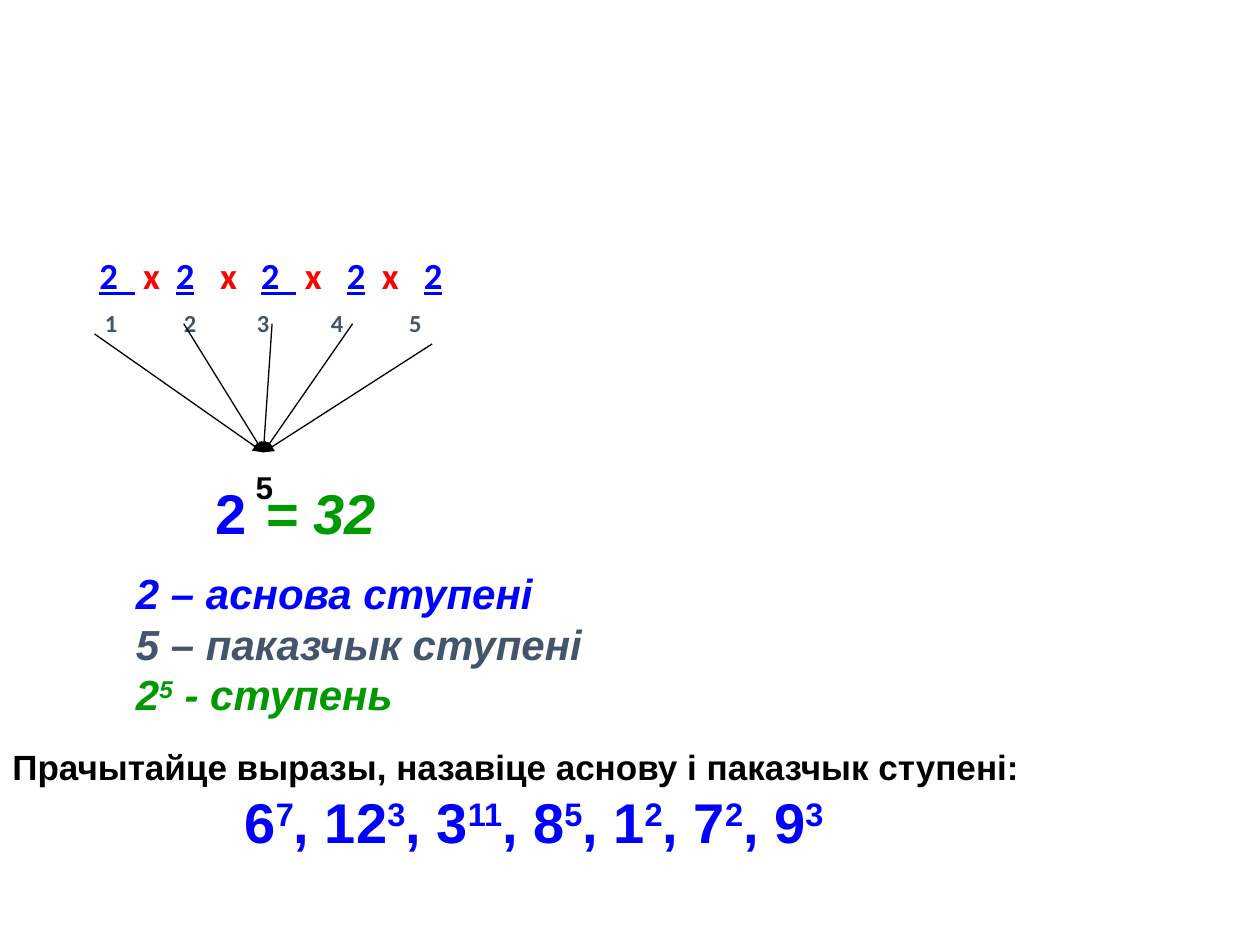
"""Build a slide that explains the base and exponent of a power."""
from lxml.etree import SubElement
from pptx import Presentation
from pptx.dml.color import RGBColor
from pptx.enum.shapes import MSO_CONNECTOR as Connector
from pptx.enum.text import MSO_AUTO_SIZE as AutoSize
from pptx.oxml.ns import qn
from pptx.util import Pt

BLUE = RGBColor(0x00, 0x00, 0xFF)
RED = RGBColor(0xFF, 0x00, 0x00)
GREEN = RGBColor(0x00, 0x99, 0x00)
SLATE = RGBColor(0x44, 0x54, 0x6A)
BLACK = RGBColor(0x00, 0x00, 0x00)

FACTORS = ["2  ", "2", "2  ", "2", "2"]
TIMES = "х"
PRODUCT_STOPS = [25, 43.7, 69, 92.3, 117.4, 141.4, 161.4, 185.4]
COUNT_STOPS = [3.2, 48.3, 90, 132.3, 177]
ARROW_STARTS = [(54, 190.8), (105, 185), (155.5, 185), (201.5, 185), (247, 196.5)]
ARROW_TIP = (150.5, 258.5)
POWERS = [("6", "7"), ("12", "3"), ("3", "11"), ("8", "5"),
          ("1", "2"), ("7", "2"), ("9", "3")]
POWERS_INDENT = 132.8

PRODUCT_FORMAT = {"name": "Calibri", "size": Pt(21), "bold": True}
COUNT_FORMAT = {"name": "Calibri", "size": Pt(14), "bold": True}
EXPONENT_FORMAT = {"name": "Arial", "size": Pt(18), "bold": True}
BASE_FORMAT = {"name": "Arial", "size": Pt(32), "bold": True}
RESULT_FORMAT = {**BASE_FORMAT, "italic": True}
TERM_FORMAT = {"name": "Arial", "size": Pt(24), "bold": True, "italic": True}
TASK_FORMAT = {"name": "Arial", "size": Pt(20), "bold": True}

EQUATION = [
    ((139, 264.2, 23, 28.8), "5", BLACK, EXPONENT_FORMAT),
    ((116, 270, 43, 45.4), "2", BLUE, BASE_FORMAT),
    ((144.7, 270, 108, 45.4), "= 32", GREEN, RESULT_FORMAT),
]
TERMS = [
    [("2 – аснова ступені", BLUE, False)],
    [("5 – паказчык ступені", SLATE, False)],
    [("2", GREEN, False), ("5", GREEN, True), (" - ступень", GREEN, False)],
]
TASK = "Прачытайце выразы, назавіце аснову і паказчык ступені:"


def add_box(slide, place, auto_size=AutoSize.SHAPE_TO_FIT_TEXT):
    frame = slide.shapes.add_textbox(*map(Pt, place)).text_frame
    frame.word_wrap = True
    frame.auto_size = auto_size
    return frame


def add_run(paragraph, text, color, formats, raised=False):
    run = paragraph.add_run()
    run.text = text
    for attribute, value in formats.items():
        setattr(run.font, attribute, value)
    run.font.color.rgb = color
    if raised:
        run._r.get_or_add_rPr().set("baseline", "30000")


def set_stops(paragraph, stops):
    paragraph.line_spacing = 0.9
    paragraph.space_before = Pt(7.5)
    stop_list = SubElement(paragraph._p.get_or_add_pPr(), qn("a:tabLst"))
    for stop in stops:
        SubElement(stop_list, qn("a:tab"), pos=str(Pt(stop)), algn="l")


def add_product(slide):
    frame = add_box(slide, (49.7, 144, 620.6, 342.7), AutoSize.NONE)
    product, counts = frame.paragraphs[0], frame.add_paragraph()
    set_stops(product, PRODUCT_STOPS)
    set_stops(counts, COUNT_STOPS)
    for number, factor in enumerate(FACTORS, 1):
        if number > 1:
            add_run(product, f"\t{TIMES}\t", RED, PRODUCT_FORMAT)
        add_run(product, factor, BLUE, {**PRODUCT_FORMAT, "underline": True})
        add_run(counts, f"\t{number}", SLATE, COUNT_FORMAT)


def add_arrow(slide, start):
    arrow = slide.shapes.add_connector(
        Connector.STRAIGHT, *map(Pt, start + ARROW_TIP))
    arrow.line.color.rgb = BLACK
    arrow.line.width = Pt(0.75)
    SubElement(arrow.line._get_or_add_ln(), qn("a:tailEnd"), type="triangle")
    SubElement(arrow._element.spPr, qn("a:effectLst"))


def add_terms(slide):
    frame = add_box(slide, (70.6, 321, 334.8, 94.3))
    for index, term in enumerate(TERMS):
        line = frame.add_paragraph() if index else frame.paragraphs[0]
        for text, color, raised in term:
            add_run(line, text, color, TERM_FORMAT, raised)


def add_task(slide):
    frame = add_box(slide, (0, 422.6, 720, 70.6))
    add_run(frame.paragraphs[0], TASK, BLACK, TASK_FORMAT)
    powers = frame.add_paragraph()
    powers._p.get_or_add_pPr().set("marL", str(Pt(POWERS_INDENT)))
    for index, (base, exponent) in enumerate(POWERS):
        add_run(powers, f", {base}" if index else base, BLUE, BASE_FORMAT)
        add_run(powers, exponent, BLUE, BASE_FORMAT, raised=True)


def main():
    deck = Presentation()
    deck.slide_width, deck.slide_height = Pt(720), Pt(540)
    slide = deck.slides.add_slide(deck.slide_layouts[6])
    add_product(slide)
    for start in ARROW_STARTS:
        add_arrow(slide, start)
    for place, text, color, formats in EQUATION:
        add_run(add_box(slide, place).paragraphs[0], text, color, formats)
    add_terms(slide)
    add_task(slide)
    deck.save("out.pptx")


if __name__ == "__main__":
    main()
